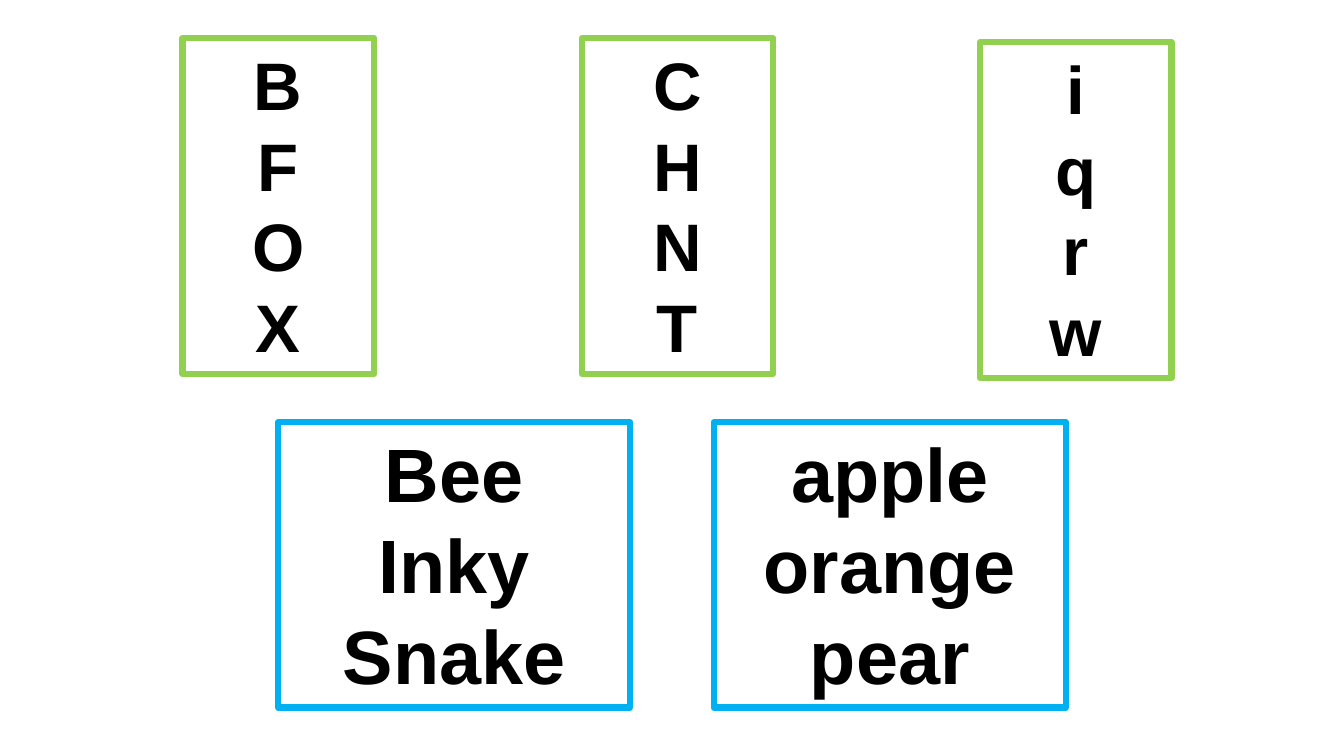
from dataclasses import dataclass

from pptx import Presentation
from pptx.dml.color import RGBColor
from pptx.enum.text import MSO_ANCHOR, MSO_AUTO_SIZE, PP_ALIGN
from pptx.slide import Slide
from pptx.util import Emu, Pt

CENTER = PP_ALIGN.CENTER
TOP = MSO_ANCHOR.TOP
GROW = MSO_AUTO_SIZE.SHAPE_TO_FIT_TEXT

EMU_PER_PX = 9144  # 100 px to the inch
SLIDE_WIDTH, SLIDE_HEIGHT = 1333, 750
BLANK_LAYOUT = 6

FONT = "Arial"
BLACK = RGBColor(0x00, 0x00, 0x00)
GREEN = RGBColor(0x92, 0xD0, 0x50)
BLUE = RGBColor(0x00, 0xB0, 0xF0)
BORDER_WIDTH = Pt(4.5)


@dataclass(frozen=True)
class CardStyle:
    width: int
    height: int
    border: RGBColor
    font_size: int


@dataclass(frozen=True)
class Card:
    left: int
    top: int
    style: CardStyle
    lines: tuple[str, ...]


LETTERS = CardStyle(190, 333, GREEN, 48)
WORDS = CardStyle(349, 283, BLUE, 54)

CARDS = (
    Card(181, 38, LETTERS, ("B", "F", "O", "X")),
    Card(577, 38, LETTERS, ("C", "H", "N", "T")),
    Card(972, 42, LETTERS, ("i", "q", "r", "w")),
    Card(276, 419, WORDS, ("Bee", "Inky", "Snake")),
    Card(708, 419, WORDS, ("apple", "orange", "pear")),
)


def px(length: int) -> Emu:
    return Emu(length * EMU_PER_PX)


def add_card(slide: Slide, card: Card) -> None:
    style = card.style
    shape = slide.shapes.add_textbox(
        px(card.left), px(card.top), px(style.width), px(style.height)
    )
    shape.line.color.rgb = style.border
    shape.line.width = BORDER_WIDTH

    frame = shape.text_frame
    frame.word_wrap = True
    frame.auto_size = GROW
    frame.vertical_anchor = TOP
    for index, line in enumerate(card.lines):
        paragraph = frame.add_paragraph() if index else frame.paragraphs[0]
        paragraph.alignment = CENTER
        run = paragraph.add_run()
        run.text = line
        run.font.name = FONT
        run.font.size = Pt(style.font_size)
        run.font.bold = True
        run.font.color.rgb = BLACK


def main() -> None:
    presentation = Presentation()
    presentation.slide_width = px(SLIDE_WIDTH)
    presentation.slide_height = px(SLIDE_HEIGHT)
    slide = presentation.slides.add_slide(presentation.slide_layouts[BLANK_LAYOUT])
    for card in CARDS:
        add_card(slide, card)
    presentation.save("out.pptx")


if __name__ == "__main__":
    main()
